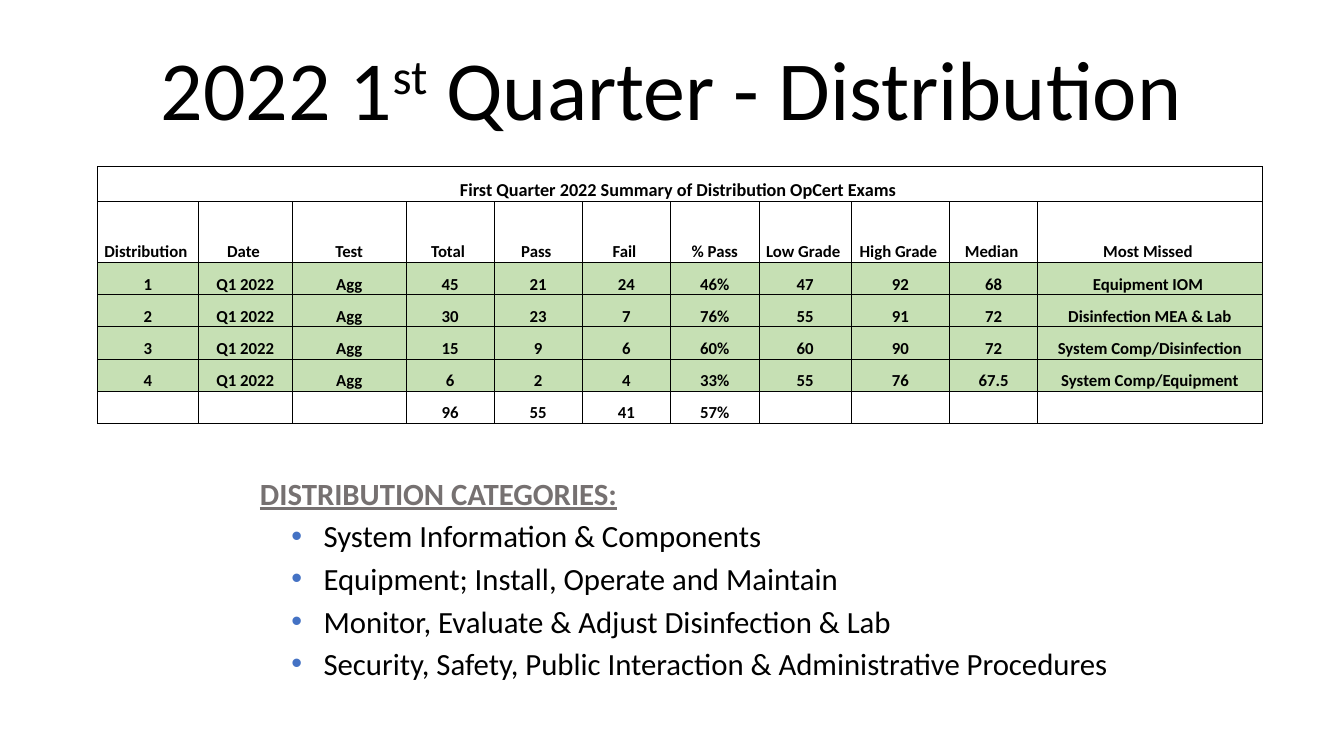
from lxml import etree
from pptx import Presentation
from pptx.dml.color import RGBColor
from pptx.enum.text import MSO_ANCHOR, PP_ALIGN
from pptx.oxml import parse_xml
from pptx.oxml.ns import qn
from pptx.util import Pt

CENTER = PP_ALIGN.CENTER
BOTTOM = MSO_ANCHOR.BOTTOM
NAMESPACE = "http://schemas.openxmlformats.org/drawingml/2006/main"
BLACK = "000000"
GREY = "767171"
GREEN = "C6E0B4"
BLUE = "4472C4"


def rgb(value):
    return RGBColor.from_string(value)


def add_run(paragraph, text, size, color=BLACK, bold=False):
    run = paragraph.add_run()
    run.text = text
    run.font.name = "Calibri"
    run.font.size = Pt(size)
    run.font.bold = bold
    run.font.color.rgb = rgb(color)
    return run


prs = Presentation()
prs.slide_width = Pt(960)
prs.slide_height = Pt(540)
slide = prs.slides.add_slide(prs.slide_layouts[6])

title = slide.shapes.add_textbox(Pt(29.5), Pt(24.5), Pt(900), Pt(77.8)).text_frame
title.word_wrap = True
title.vertical_anchor = BOTTOM
heading = title.paragraphs[0]
heading.alignment = CENTER
heading.line_spacing = 0.9
add_run(heading, "2022 1", 60)
ordinal = add_run(heading, "st", 60)
ordinal.font._element.set("baseline", "30000")
add_run(heading, " Quarter - Distribution", 60)

categories = slide.shapes.add_textbox(Pt(178.6), Pt(335.5), Pt(705), Pt(167.8)).text_frame
categories.word_wrap = True
categories_heading = categories.paragraphs[0]
add_run(categories_heading, "DISTRIBUTION CATEGORIES:", 22, GREY, True).font.underline = True
for category in (
    "System Information & Components",
    "Equipment; Install, Operate and Maintain",
    "Monitor, Evaluate & Adjust Disinfection & Lab",
    "Security, Safety, Public Interaction & Administrative Procedures",
):
    item = categories.add_paragraph()
    item.space_before = Pt(4)
    properties = item._p.get_or_add_pPr()
    properties.set("marL", str(Pt(45.4)))
    properties.set("indent", str(Pt(-23)))
    bullet_color = etree.SubElement(properties, qn("a:buClr"))
    etree.SubElement(bullet_color, qn("a:srgbClr"), val=BLUE)
    etree.SubElement(properties, qn("a:buFont"), typeface="Arial")
    etree.SubElement(properties, qn("a:buChar"), char="•")
    add_run(item, category, 22)

exam_rows = [
    ["First Quarter 2022 Summary of Distribution OpCert Exams "] + [""] * 10,
    ["Distribution ", "Date ", "Test", "Total ", "Pass ", "Fail ", "% Pass",
     "Low Grade ", "High Grade ", "Median ", "Most Missed "],
    ["1", "Q1 2022", "Agg", "45", "21", "24", "46%", "47", "92", "68", "Equipment IOM "],
    ["2", "Q1 2022", "Agg", "30", "23", "7", "76%", "55", "91", "72", "Disinfection MEA & Lab"],
    ["3", "Q1 2022", "Agg", "15", "9", "6", "60%", "60", "90", "72", "System Comp/Disinfection"],
    ["4", "Q1 2022", "Agg", "6", "2", "4", "33%", "55", "76", "67.5", "System Comp/Equipment"],
    ["", "", "", "96", "55", "41", "57%", "", "", "", ""],
]
column_widths = [72, 67.4, 81, 63, 63, 63, 63.3, 65.8, 70.2, 63, 160.4]
row_heights = [25.2, 43.4] + [23] * 5

exams = slide.shapes.add_table(
    len(exam_rows), len(column_widths), Pt(69.6), Pt(118.8),
    Pt(sum(column_widths)), Pt(sum(row_heights)),
).table
exams.first_row = False
exams.horz_banding = False
for column, width in zip(exams.columns, column_widths):
    column.width = Pt(width)
for row, height in zip(exams.rows, row_heights):
    row.height = Pt(height)

for row_index, values in enumerate(exam_rows):
    for column_index, value in enumerate(values):
        cell = exams.cell(row_index, column_index)
        cell.vertical_anchor = BOTTOM
        cell.margin_left = cell.margin_right = cell.margin_top = Pt(0.7)
        cell.margin_bottom = 0
        for side in ("lnL", "lnR", "lnT", "lnB"):
            cell._tc.get_or_add_tcPr().append(parse_xml(
                f'<a:{side} xmlns:a="{NAMESPACE}" w="{Pt(0.5)}"><a:solidFill>'
                f'<a:srgbClr val="{BLACK}"/></a:solidFill></a:{side}>'
            ))
        if 2 <= row_index <= 5:
            cell.fill.solid()
            cell.fill.fore_color.rgb = rgb(GREEN)
        else:
            cell.fill.background()
        if value:
            entry = cell.text_frame.paragraphs[0]
            entry.alignment = CENTER
            add_run(entry, value, 13 if row_index == 0 else 12, bold=True)

exams.cell(0, 0).merge(exams.cell(0, len(column_widths) - 1))

prs.save("out.pptx")
